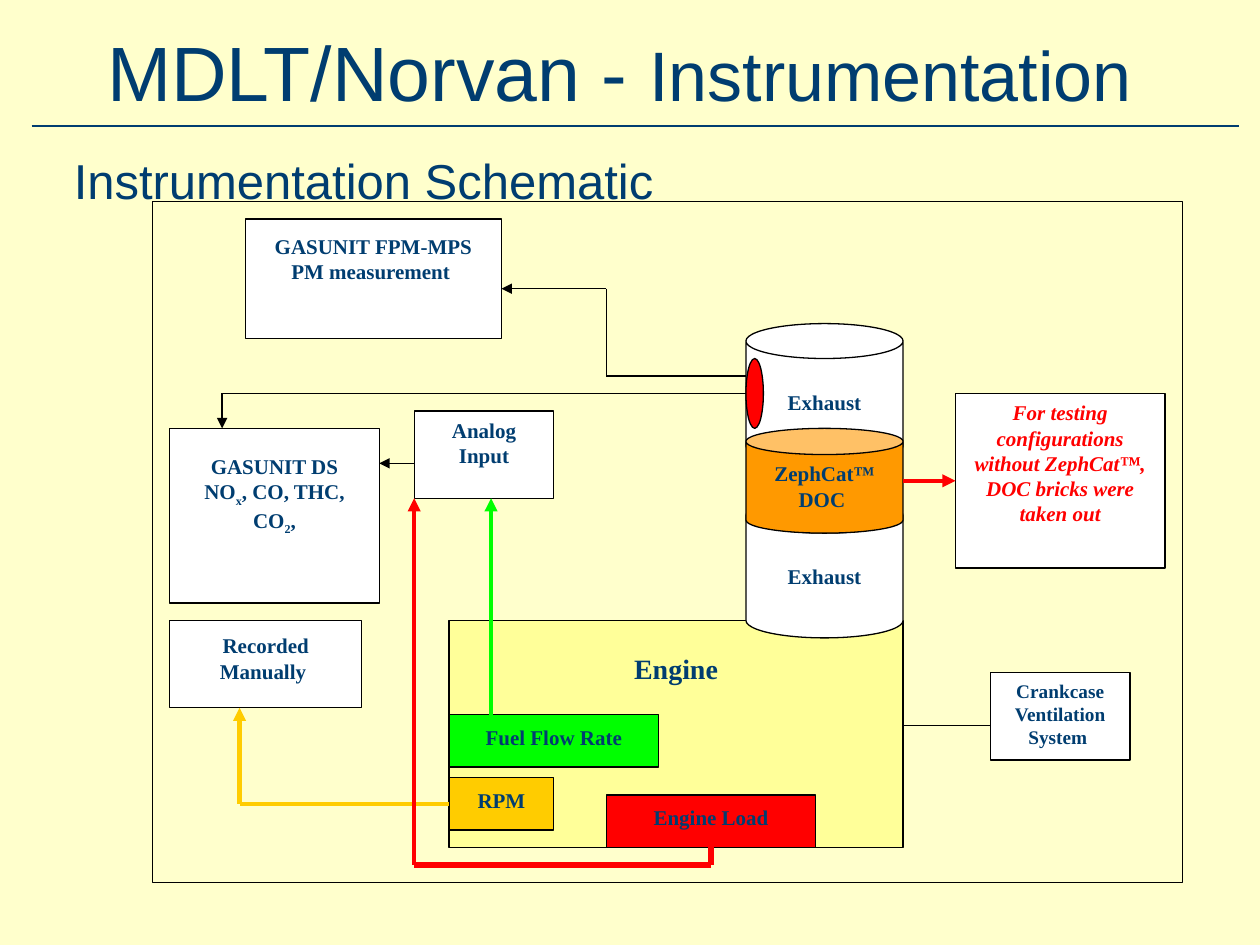
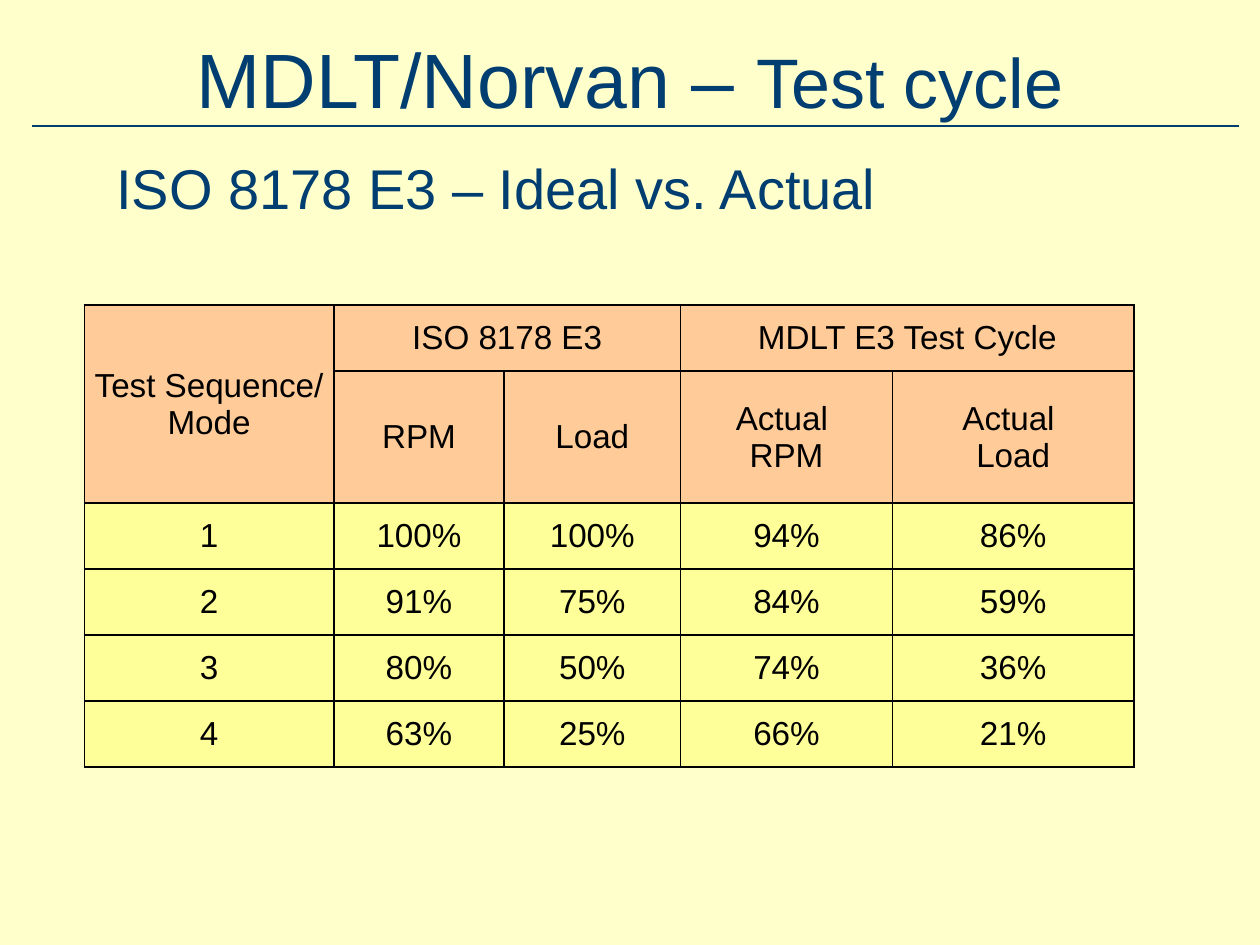
from pptx import Presentation
from pptx.dml.color import RGBColor
from pptx.enum.shapes import MSO_CONNECTOR, MSO_SHAPE
from pptx.enum.text import MSO_ANCHOR, PP_ALIGN
from pptx.oxml.ns import qn
from pptx.util import Cm, Pt
from lxml import etree

RECT, CAN, OVAL = MSO_SHAPE.RECTANGLE, MSO_SHAPE.CAN, MSO_SHAPE.OVAL
LINE = MSO_CONNECTOR.STRAIGHT
LEFT, MID = PP_ALIGN.LEFT, PP_ALIGN.CENTER
TOP, HALF = MSO_ANCHOR.TOP, MSO_ANCHOR.MIDDLE

CREAM = RGBColor(0xFF, 0xFF, 0xCC)
NAVY = RGBColor(0x00, 0x3D, 0x70)
BLACK = RGBColor(0x00, 0x00, 0x00)
WHITE = RGBColor(0xFF, 0xFF, 0xFF)
RED = RGBColor(0xFF, 0x00, 0x00)
GREEN = RGBColor(0x00, 0xFF, 0x00)
GOLD = RGBColor(0xFF, 0xCC, 0x00)
ORANGE = RGBColor(0xFF, 0x99, 0x00)
YELLOW = RGBColor(0xFF, 0xFF, 0x99)
PEACH = RGBColor(0xFF, 0xCC, 0x99)

SANS, SERIF = "Arial", "Times New Roman"
UNIT, GRID_X, GRID_Y = 0.352, 3.07, 4.06

COLS = [5.03, 3.43, 3.56, 4.27, 4.87]
ROWS = [1.33, 2.66] + [1.33] * 4
CELLS = [
    ["Test Sequence/\nMode", "ISO 8178 E3", "", "MDLT E3 Test Cycle", ""],
    ["", "RPM", "Load", "Actual \nRPM", "Actual \nLoad"],
    ["1", "100%", "100%", "94%", "86%"],
    ["2", "91%", "75%", "84%", "59%"],
    ["3", "80%", "50%", "74%", "36%"],
    ["4", "63%", "25%", "66%", "21%"],
]
SPANS = [(0, 0, 1, 0), (0, 1, 0, 2), (0, 3, 0, 4)]


def grid_x(x):
    return Cm(GRID_X + UNIT * x)


def grid_y(y):
    return Cm(GRID_Y + UNIT * y)


def style(font, name, size, color, bold=False, slant=False):
    font.name, font.size = name, Pt(size)
    font.bold, font.italic = bold, slant
    font.color.rgb = color


def add_line(slide, start, end, color, width, arrow=False):
    line = slide.shapes.add_connector(LINE, *start, *end)
    line.line.color.rgb = color
    line.line.width = Pt(width)
    props = line._element.spPr
    if arrow:
        etree.SubElement(props.find(qn("a:ln")), qn("a:tailEnd"), type="triangle")
    etree.SubElement(props, qn("a:effectLst"))


def add_text(slide, box, parts, align, anchor):
    frame = slide.shapes.add_textbox(*map(Cm, box)).text_frame
    frame.word_wrap = True
    frame.vertical_anchor = anchor
    para = frame.paragraphs[0]
    para.alignment = align
    for text, size in parts:
        run = para.add_run()
        run.text = text
        style(run.font, SANS, size, NAVY)


def add_page(deck, top, height, title):
    slide = deck.slides.add_slide(deck.slide_layouts[6])
    fill = slide.background.fill
    fill.solid()
    fill.fore_color.rgb = CREAM
    rule = Cm(2.54)
    add_line(slide, (Cm(0.64), rule), (Cm(24.97), rule), NAVY, 1.5)
    add_text(slide, (1.27, top, 22.86, height), title, MID, HALF)
    return slide


def add_block(slide, kind, box, fill, text="", top=0.13, size=12, color=NAVY, slant=False):
    x, y, wide, high = box
    shape = slide.shapes.add_shape(
        kind, grid_x(x), grid_y(y), Cm(UNIT * wide), Cm(UNIT * high))
    shape.shadow.inherit = False
    shape.line.color.rgb = BLACK
    shape.line.width = Pt(0.75)
    if fill is None:
        shape.fill.background()
    else:
        shape.fill.solid()
        shape.fill.fore_color.rgb = fill
    frame = shape.text_frame
    frame.word_wrap = True
    frame.vertical_anchor = TOP
    frame.margin_top = Cm(top)
    frame.text = text
    for para in frame.paragraphs:
        para.alignment = MID
        for run in para.runs:
            style(run.font, SERIF, size, color, True, slant)
    return shape


def add_gases(para):
    para.text = "NO"
    for text in ("x", ", CO, THC, CO", "2", ","):
        para.add_run().text = text
    for run in para.runs:
        style(run.font, SERIF, 12, NAVY, True)
    for low in para.runs[1::2]:
        low._r.get_or_add_rPr().set("baseline", "-25000")
    para.alignment = MID


def add_route(slide, points, color=BLACK, width=0.75, arrow=True):
    spots = [(grid_x(x), grid_y(y)) for x, y in points]
    last = len(spots) - 2
    for i, (start, end) in enumerate(zip(spots, spots[1:])):
        add_line(slide, start, end, color, width, arrow and i == last)


def add_scheme(slide):
    add_block(slide, RECT, (0, 0, 59, 39), None)
    add_block(slide, CAN, (34, 7, 9, 8), WHITE, "Exhaust", 0.62)
    add_block(slide, RECT, (17, 24, 26, 13), YELLOW, "Engine", 0.62, 16)
    add_block(slide, CAN, (34, 17, 9, 8), WHITE, "Exhaust", 0.62)
    add_block(slide, CAN, (34, 13, 9, 6), ORANGE, "ZephCat™ DOC ")
    meter = add_block(slide, RECT, (1, 13, 12, 10), WHITE, "GASUNIT DS", 0.51)
    meter.text_frame.margin_bottom = 0
    add_gases(meter.text_frame.add_paragraph())
    add_block(slide, RECT, (46, 11, 12, 10), WHITE,
              "For testing configurations without ZephCat™, DOC bricks were taken out",
              color=RED, slant=True)
    add_block(slide, RECT, (15, 12, 8, 5), WHITE, "Analog Input")
    add_block(slide, OVAL, (34, 9, 1, 4), RED)
    add_block(slide, RECT, (17, 33, 6, 3), GOLD, "RPM", 0.2)
    add_block(slide, RECT, (26, 34, 12, 3), RED, "Engine Load", 0.2)
    add_block(slide, RECT, (5.33, 1, 14.67, 6.85), WHITE,
              "GASUNIT FPM-MPS\nPM measurement ", 0.3)
    add_block(slide, RECT, (17, 29.4, 12, 3), GREEN, "Fuel Flow Rate", 0.2)
    add_block(slide, RECT, (1, 24, 11, 5), WHITE, "Recorded Manually ", 0.25)
    add_block(slide, RECT, (48, 27, 8, 5), WHITE, "Crankcase Ventilation System ", size=11)

    add_route(slide, [(34, 11), (4, 11), (4, 13)])
    add_route(slide, [(34, 10), (26, 10), (26, 5), (20, 5)])
    add_route(slide, [(15, 15), (13, 15)])
    add_route(slide, [(48, 30), (43, 30)], arrow=False)
    add_route(slide, [(43, 16), (46, 16)], RED, 2.5)
    add_route(slide, [(17, 34.5), (5, 34.5), (5, 29)], GOLD, 2.5)
    add_route(slide, [(32, 37), (32, 38), (15, 38)], RED, 3, False)
    add_route(slide, [(15, 38), (15, 17)], RED, 2.5)
    add_route(slide, [(19.4, 29.4), (19.4, 17)], GREEN, 2.5)


def add_edges(cell):
    props = cell._tc.get_or_add_tcPr()
    for i, side in enumerate(("lnL", "lnR", "lnT", "lnB")):
        edge = etree.Element(qn("a:" + side), w=str(Pt(1)))
        fill = etree.SubElement(edge, qn("a:solidFill"))
        etree.SubElement(fill, qn("a:srgbClr"), val=str(BLACK))
        props.insert(i, edge)


def fill_cell(cell, text, fill):
    cell.fill.solid()
    cell.fill.fore_color.rgb = fill
    cell.vertical_anchor = HALF
    cell.margin_left = cell.margin_right = Cm(0.18)
    cell.margin_top = cell.margin_bottom = 0
    cell.text_frame.text = text
    for para in cell.text_frame.paragraphs:
        para.alignment = MID
        style(para.font, SANS, 19, BLACK)
        for run in para.runs:
            style(run.font, SANS, 19, BLACK)
    add_edges(cell)


def add_cycle(slide):
    table = slide.shapes.add_table(
        len(ROWS), len(COLS), Cm(1.7), Cm(6.15), Cm(sum(COLS)), Cm(sum(ROWS))).table
    table.first_row = table.horz_banding = False
    for col, wide in zip(table.columns, COLS):
        col.width = Cm(wide)
    for row, high in zip(table.rows, ROWS):
        row.height = Cm(high)
    for r, texts in enumerate(CELLS):
        for c, text in enumerate(texts):
            fill_cell(table.cell(r, c), text, PEACH if r < 2 else YELLOW)
    for top, left, low, right in SPANS:
        table.cell(top, left).merge(table.cell(low, right))


def main():
    deck = Presentation()
    deck.slide_width, deck.slide_height = Cm(25.4), Cm(19.05)

    slide = add_page(deck, 0.43, 1.98,
                     [("MDLT/Norvan - ", 44), ("Instrumentation", 40), (" ", 44)])
    add_scheme(slide)
    add_text(slide, (1.24, 2.9, 12.55, 1.17), [("Instrumentation Schematic", 28)], LEFT, TOP)

    slide = add_page(deck, 0.64, 1.85, [("MDLT/Norvan – ", 44), ("Test cycle", 40)])
    add_cycle(slide)
    add_text(slide, (0.74, 2.97, 18.54, 1.37), [("ISO 8178 E3 – Ideal vs. Actual", 32)], MID, TOP)

    deck.save("out.pptx")


if __name__ == "__main__":
    main()
